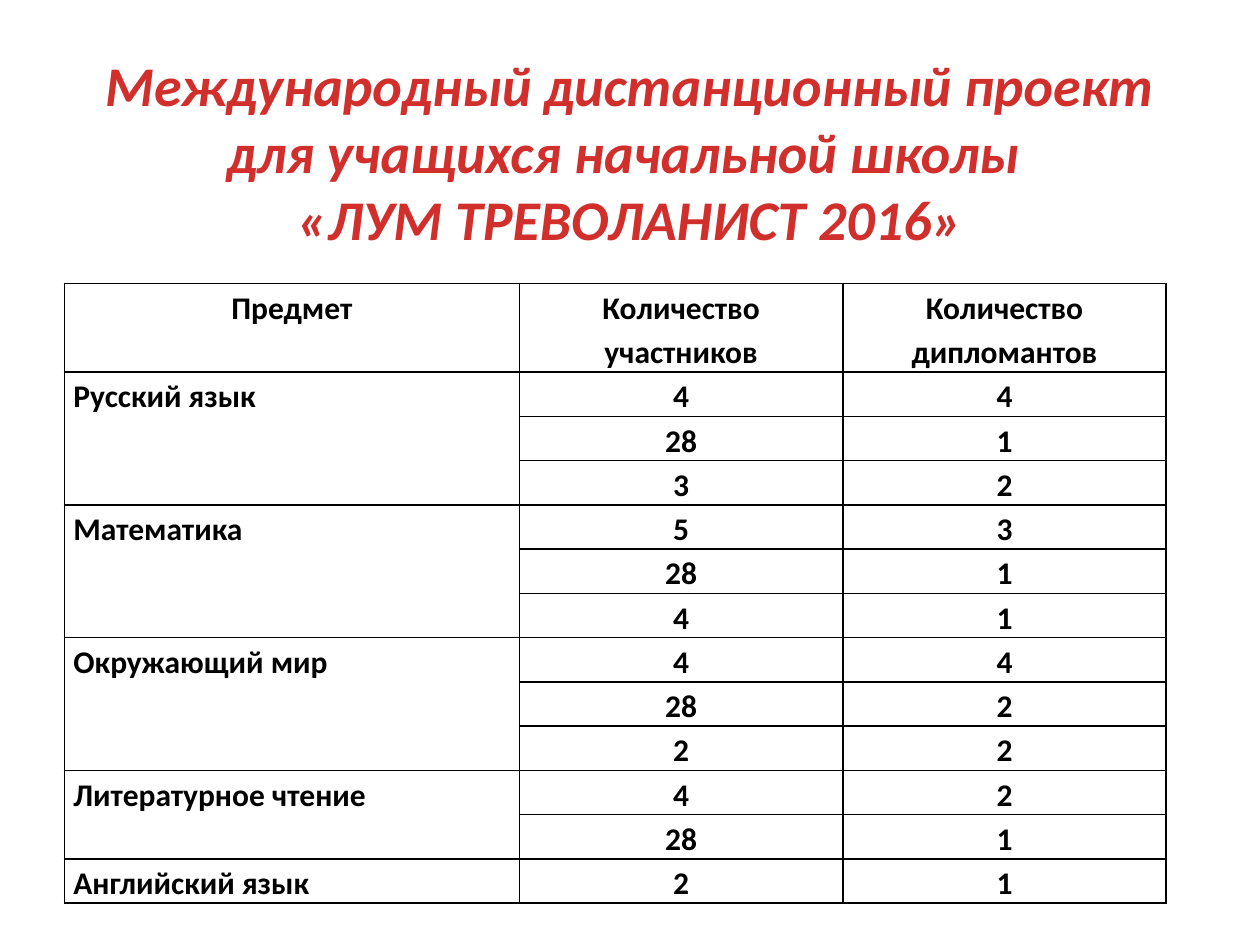
from lxml.etree import SubElement
from pptx import Presentation
from pptx.dml.color import RGBColor
from pptx.enum.text import MSO_ANCHOR, PP_ALIGN
from pptx.oxml.ns import qn
from pptx.util import Cm, Pt


def add_run(p, text, size, color, italic=False):
    r = p.add_run()
    r.text = text
    r.font.name = "Calibri"
    r.font.size = Pt(size)
    r.font.bold = True
    r.font.italic = italic
    r.font.color.rgb = RGBColor.from_string(color)


def add_borders(cell, color, width):
    tcPr = cell._tc.get_or_add_tcPr()
    for side in ("lnL", "lnR", "lnT", "lnB"):
        ln = SubElement(tcPr, qn(f"a:{side}"), w=str(Pt(width)))
        fill = SubElement(ln, qn("a:solidFill"))
        SubElement(fill, qn("a:srgbClr"), val=color)


prs = Presentation()
prs.slide_width, prs.slide_height = Cm(25.4), Cm(19.05)
s = prs.slides.add_slide(prs.slide_layouts[5])

# Title
title = s.shapes.title
title.left, title.top, title.width, title.height = Cm(1.27), Cm(0.76), Cm(22.86), Cm(4.57)
tf = title.text_frame
tf.word_wrap = True
tf.vertical_anchor = MSO_ANCHOR.MIDDLE
p = tf.paragraphs[0]
p.alignment = PP_ALIGN.CENTER
add_run(p, "Международный дистанционный проект для учащихся начальной школы ", 32, "D02F2C", True)
p.add_line_break()
add_run(p, "«ЛУМ ТРЕВОЛАНИСТ 2016»", 32, "D02F2C", True)

# Subjects with (participants, diploma winners)
header = ("Предмет", "Количество участников", "Количество дипломантов")
subjects = [
    ("Русский язык", [(4, 4), (28, 1), (3, 2)]),
    ("Математика", [(5, 3), (28, 1), (4, 1)]),
    ("Окружающий мир", [(4, 4), (28, 2), (2, 2)]),
    ("Литературное чтение", [(4, 2), (28, 1)]),
    ("Английский язык", [(2, 1)]),
]
rows = [header]
for subject, results in subjects:
    for i, (participants, winners) in enumerate(results):
        rows.append((subject if i == 0 else "", str(participants), str(winners)))

widths = (9.17, 6.52, 6.52)
row_height = 0.89
frame = s.shapes.add_table(len(rows), len(widths), Cm(1.3), Cm(5.72),
                           Cm(sum(widths)), Cm(row_height * (len(rows) + 1)))
table = frame.table
for column, width in zip(table.columns, widths):
    column.width = Cm(width)

for i, values in enumerate(rows):
    table.rows[i].height = Cm(row_height * (2 if i == 0 else 1))
    for j, text in enumerate(values):
        cell = table.cell(i, j)
        cell.margin_left = cell.margin_right = Cm(0.18)
        cell.margin_top = cell.margin_bottom = Cm(0)
        cell.vertical_anchor = MSO_ANCHOR.TOP
        add_borders(cell, "000000", 1)
        cell.fill.background()
        if text:
            p = cell.text_frame.paragraphs[0]
            p.alignment = PP_ALIGN.JUSTIFY if i and j == 0 else PP_ALIGN.CENTER
            p.line_spacing = 1.15
            add_run(p, text, 18, "000000")

# Each subject spans the rows of its results
top = 1
for subject, results in subjects:
    bottom = top + len(results) - 1
    if bottom > top:
        table.cell(top, 0).merge(table.cell(bottom, 0))
    top = bottom + 1

prs.save("out.pptx")
